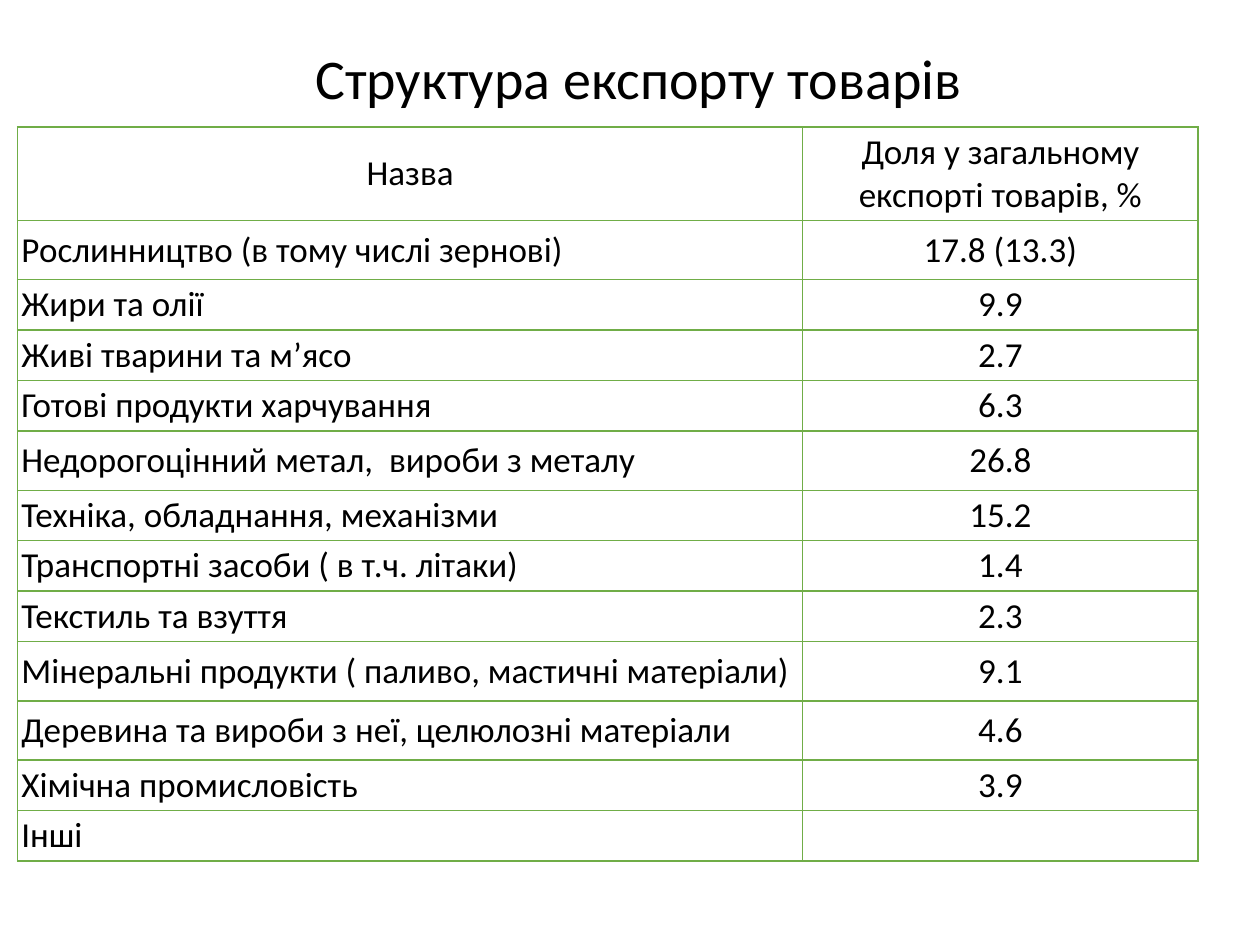
from lxml.etree import SubElement
from pptx import Presentation
from pptx.dml.color import RGBColor
from pptx.enum.text import MSO_ANCHOR, PP_ALIGN
from pptx.oxml.ns import qn
from pptx.util import Inches, Pt

FONT = "Calibri"
BLACK, WHITE, GREEN = "000000", "FFFFFF", "70AD47"
HEADER_HEIGHT, TALL, SHORT = 0.74, 0.47, 0.4
HEADINGS = ("Назва", "Доля у загальному експорті товарів, %")
EXPORTS = [
    ("Рослинництво (в тому числі зернові)", "17.8 (13.3)", TALL),
    ("Жири та олії", "9.9", SHORT),
    ("Живі тварини та м’ясо", "2.7", SHORT),
    ("Готові продукти харчування", "6.3", SHORT),
    ("Недорогоцінний метал,  вироби з металу", "26.8", TALL),
    ("Техніка, обладнання, механізми", "15.2", SHORT),
    ("Транспортні засоби ( в т.ч. літаки)", "1.4", SHORT),
    ("Текстиль та взуття", "2.3", SHORT),
    ("Мінеральні продукти ( паливо, мастичні матеріали)", "9.1", TALL),
    ("Деревина та вироби з неї, целюлозні матеріали", "4.6", TALL),
    ("Хімічна промисловість", "3.9", SHORT),
    ("Інші", "", SHORT),
]


def color(hex_code):
    return RGBColor.from_string(hex_code)


def write(frame, text, size=20, align=PP_ALIGN.LEFT, ink=BLACK):
    paragraph = frame.paragraphs[0]
    paragraph.alignment = align
    paragraph.font.size = Pt(size)
    if text:
        run = paragraph.add_run()
        run.text = text
        run.font.name = FONT
        run.font.size = Pt(size)
        run.font.color.rgb = color(ink)


def set_borders(cell, ink=GREEN, width=1):
    """Line all four sides; borders must precede the cell's fill in the XML."""
    properties = cell._tc.get_or_add_tcPr()
    for side in ("a:lnL", "a:lnR", "a:lnT", "a:lnB"):
        line = SubElement(properties, qn(side), w=str(Pt(width)))
        fill = SubElement(line, qn("a:solidFill"))
        SubElement(fill, qn("a:srgbClr"), val=ink)


def format_cell(cell, text, align):
    cell.margin_left = cell.margin_right = Inches(0.03)
    cell.margin_top = cell.margin_bottom = Inches(0.03)
    cell.vertical_anchor = MSO_ANCHOR.MIDDLE
    set_borders(cell)
    cell.fill.solid()
    cell.fill.fore_color.rgb = color(WHITE)
    write(cell.text_frame, text, align=align)


def place_title(slide, left, top, width, height):
    title = slide.shapes.title
    title.left, title.top = Inches(left), Inches(top)
    title.width, title.height = Inches(width), Inches(height)
    title.text_frame.word_wrap = False
    title.text_frame.vertical_anchor = MSO_ANCHOR.MIDDLE
    write(title.text_frame, "Структура експорту товарів", size=32,
          align=PP_ALIGN.CENTER)


def place_export_table(slide, left, top, width):
    rows = [(*HEADINGS, HEADER_HEIGHT), *EXPORTS]
    height = sum(row_height for *_, row_height in rows)
    table = slide.shapes.add_table(len(rows), 2, Inches(left), Inches(top),
                                   Inches(width), Inches(height)).table
    table.first_row = table.horz_banding = False
    share_width = 3.14
    table.columns[0].width = Inches(width - share_width)
    table.columns[1].width = Inches(share_width)
    for index, (product, share, row_height) in enumerate(rows):
        table.rows[index].height = Inches(row_height)
        product_align = PP_ALIGN.LEFT if index else PP_ALIGN.CENTER
        format_cell(table.cell(index, 0), product, product_align)
        format_cell(table.cell(index, 1), share, PP_ALIGN.CENTER)


def main():
    presentation = Presentation()
    presentation.slide_width, presentation.slide_height = Inches(10), Inches(7.5)
    slide = presentation.slides.add_slide(presentation.slide_layouts[5])
    place_title(slide, 2.38, 0.29, 5.38, 0.64)
    place_export_table(slide, 0.14, 1.01, 9.37)
    presentation.save("out.pptx")


if __name__ == "__main__":
    main()
